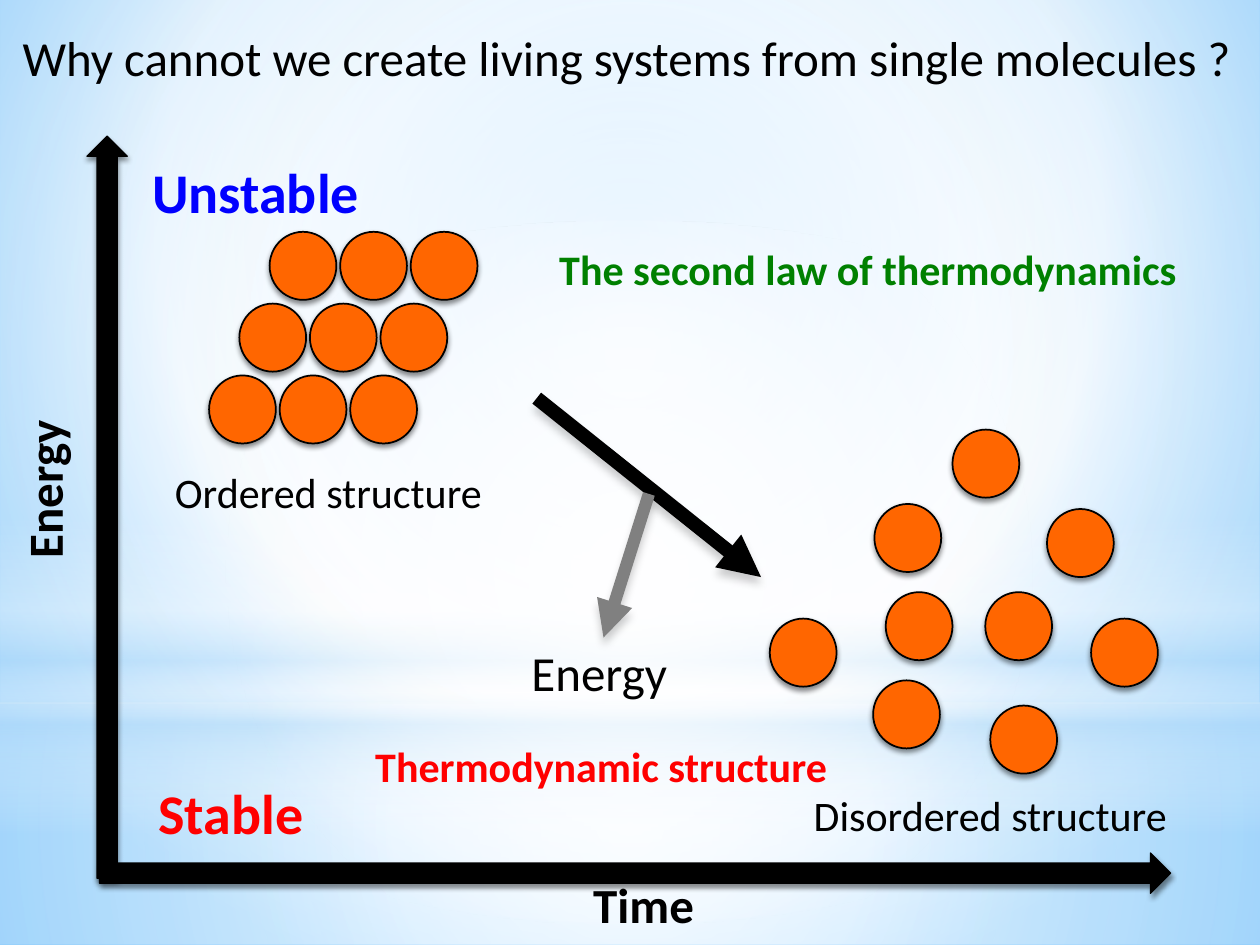
from pptx import Presentation
from pptx import util as u
from pptx.dml.color import RGBColor
from pptx.enum import shapes, text
from pptx.oxml import parse_xml
from pptx.oxml.ns import nsdecls, qn

W, H = 10, 7.5
FONT = "Calibri"
INK = {"black": "000000", "gray": "808080", "orange": "FF6600", "green": "008000",
       "blue": "0000FF", "red": "FF0000", "white": "FFFFFF", "sky": "B4DCFA",
       "pale": "9ED5FF", "deep": "5BB9FF"}
KIND = shapes.MSO_SHAPE
BALL = (0.53, 0.54)
LOOSE = [(7.56, 3.41), (6.94, 4), (8.31, 4.04), (7.03, 4.7), (7.82, 4.7),
         (6.11, 4.91), (8.66, 4.91), (6.93, 5.4), (7.86, 5.6)]


def rgb(name):
    return RGBColor.from_string(INK[name])


def inch(*vals):
    return [u.Inches(v) for v in vals]


def blend(stops, focus=None):
    """Gradient of (place, colour, opacity) stops: round a focus, or downward."""
    marks = "".join(
        f'<a:gs pos="{at * 1000}"><a:srgbClr val="{INK[ink]}">'
        f'<a:alpha val="{see * 1000}"/></a:srgbClr></a:gs>' for at, ink, see in stops)
    if focus:
        sides = " ".join(f'{k}="{v * 1000}"' for k, v in zip("ltrb", focus))
        way = f'<a:path path="circle"><a:fillToRect {sides}/></a:path>'
    else:
        way = '<a:lin ang="5400000" scaled="0"/>'
    return parse_xml(f'<a:gradFill {nsdecls("a")} rotWithShape="1">'
                     f'<a:gsLst>{marks}</a:gsLst>{way}</a:gradFill>')


def swap(root, grad):
    old = root.find(".//" + qn("a:solidFill"))
    old.getparent().replace(old, grad)


def shade(item, see, blur, dist):
    """Shadow that falls straight down."""
    props = item._element.spPr
    for old in props.findall(qn("a:effectLst")):
        props.remove(old)
    props.append(parse_xml(
        f'<a:effectLst {nsdecls("a")}><a:outerShdw blurRad="{u.Pt(blur)}" '
        f'dist="{u.Pt(dist)}" dir="5400000" rotWithShape="0"><a:srgbClr val="000000">'
        f'<a:alpha val="{see * 1000}"/></a:srgbClr></a:outerShdw></a:effectLst>'))


def veil(slide, kind, box, stops, focus=None):
    item = slide.shapes.add_shape(kind, *inch(*box))
    item.shadow.inherit = False
    item.line.fill.background()
    item.fill.solid()
    swap(item._element.spPr, blend(stops, focus))


def solid(slide, kind, box, ink, width, turn=0):
    item = slide.shapes.add_shape(kind, *inch(*box))
    item.rotation = turn
    item.fill.solid()
    item.fill.fore_color.rgb = rgb(ink)
    item.line.color.rgb = rgb("black")
    item.line.width = u.Pt(width)
    shade(item, 45, 3.1, 1.8)


def ball(slide, x, y):
    solid(slide, KIND.OVAL, (x, y, *BALL), "orange", 1)


def arrow(slide, start, end, ink, width):
    item = slide.shapes.add_connector(shapes.MSO_CONNECTOR.STRAIGHT, *inch(*start, *end))
    item.line.color.rgb = rgb(ink)
    item.line.width = u.Pt(width)
    item.line._get_or_add_ln().append(
        parse_xml(f'<a:tailEnd {nsdecls("a")} type="triangle"/>'))
    shade(item, 20, 5, 4)


def write(item, words, size, ink="black", bold=False, wrap=False):
    frame = item.text_frame
    frame.word_wrap = wrap
    frame.auto_size = text.MSO_AUTO_SIZE.NONE
    frame.vertical_anchor = text.MSO_ANCHOR.TOP
    para = frame.paragraphs[0]
    para.alignment = text.PP_ALIGN.LEFT
    run = para.add_run()
    run.text = words
    run.font.name, run.font.size, run.font.bold = FONT, u.Pt(size), bold
    run.font.color.rgb = rgb(ink)


def label(slide, box, words, size, ink="black", bold=False, wrap=False, turn=0):
    item = slide.shapes.add_textbox(*inch(*box))
    item.rotation = turn
    write(item, words, size, ink, bold, wrap)


def backdrop(slide):
    slide.background.fill.solid()
    swap(slide._element, blend([(0, "pale", 100), (60, "white", 100), (100, "deep", 100)],
                               (20, 10, 20, 60)))
    mid, sea = (50,) * 4, 5.58
    veil(slide, KIND.RECTANGLE, (0, sea, W, H - sea),
         [(0, "white", 91), (37, "white", 76), (100, "sky", 79)], mid)
    veil(slide, KIND.RECTANGLE, (0, 0, W, sea),
         [(0, "white", 89), (48, "white", 62), (100, "sky", 79)], mid)
    veil(slide, KIND.RECTANGLE, (0, 4.12, W, H / 3),
         [(0, "white", 0), (29, "white", 30), (45, "sky", 40),
          (55, "white", 26), (65, "sky", 60), (100, "white", 0)])
    veil(slide, KIND.OVAL, (0, 1.75, W, sea), [(0, "white", 100), (56, "white", 0)], mid)


def heading(slide):
    title = slide.shapes.title
    title.left, title.top, title.width, title.height = inch(0.08, 0.17, 9.94, 0.57)
    write(title, "Why cannot we create living systems from single molecules ?", 28)
    slide.shapes._spTree.append(title._element)  # lift above the backdrop


def axes(slide):
    solid(slide, KIND.UP_ARROW, (0.69, 1.08, 0.32, 5.89), "black", 0.75)
    solid(slide, KIND.UP_ARROW, (4.88, 2.68, 0.32, 8.5), "black", 0.75, 90)
    label(slide, (-0.31, 3.59, 1.31, 0.57), "Energy", 28, bold=True, turn=270)
    label(slide, (4.61, 6.89, 1.01, 0.57), "Time", 28, bold=True)


def main():
    deck = Presentation()
    deck.slide_width, deck.slide_height = inch(W, H)
    slide = deck.slides.add_slide(deck.slide_layouts[5])
    backdrop(slide)
    heading(slide)
    axes(slide)

    # Ordered state: a slanted three by three grid
    for row in range(3):
        for col in range(3):
            ball(slide, 2.14 - 0.24 * row + 0.56 * col, 1.84 + 0.57 * row)
    label(slide, (1.29, 3.65, 2.68, 0.5), "Ordered structure", 24)

    # Disordered state
    for spot in LOOSE:
        ball(slide, *spot)
    label(slide, (6.36, 6.22, 3.05, 0.5), "Disordered structure", 24)

    # Change of state and the energy it gives off
    arrow(slide, (4.26, 3.16), (6.04, 4.58), "black", 8)
    arrow(slide, (5.15, 3.92), (4.79, 5.06), "gray", 7)
    label(slide, (4.12, 5.05, 1.3, 0.57), "Energy", 28)

    # Coloured notes
    label(slide, (4.34, 1.88, 5.44, 0.52), "The second law of thermodynamics", 24,
          "green", True, True)
    label(slide, (1.11, 1.2, 2.14, 0.64), "Unstable", 32, "blue", True, True)
    label(slide, (1.16, 6.13, 2.06, 0.64), "Stable", 32, "red", True, True)
    label(slide, (2.88, 5.83, 3.83, 0.5), "Thermodynamic structure", 24, "red", True)
    deck.save("out.pptx")


if __name__ == "__main__":
    main()
